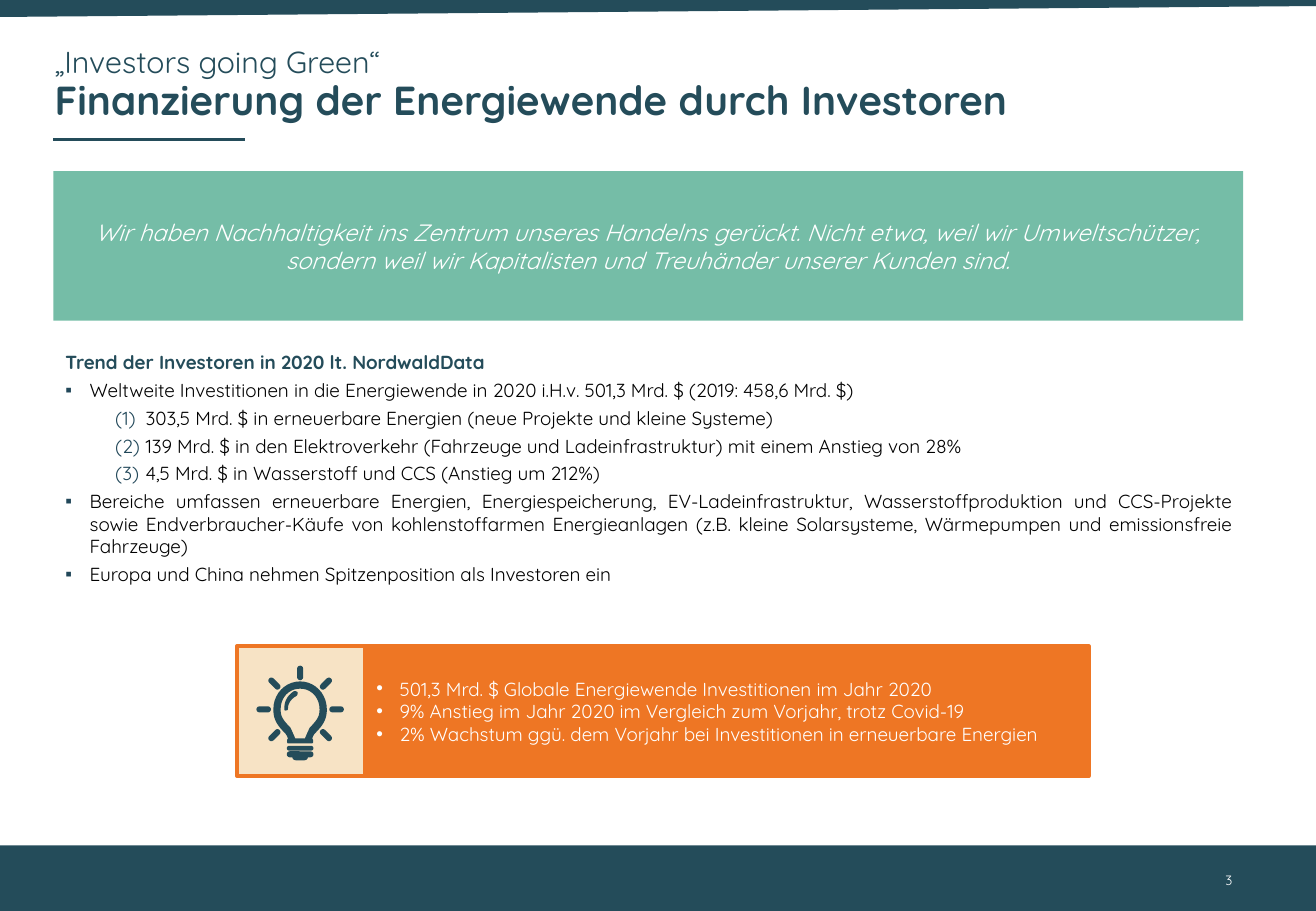
"""Build the slide on how investors finance the energy transition."""
from dataclasses import dataclass
from math import cos, radians, sin

from lxml.etree import SubElement
from pptx import Presentation
from pptx.dml.color import RGBColor
from pptx.enum.shapes import MSO_CONNECTOR, MSO_SHAPE
from pptx.enum.text import MSO_ANCHOR, PP_ALIGN
from pptx.oxml.ns import qn
from pptx.util import Inches, Pt


@dataclass(frozen=True)
class Theme:
    font: str = "Quicksand"
    petrol: str = "244C5A"
    marker: str = "214759"
    green: str = "75BDA7"
    orange: str = "EE7624"
    cream: str = "F7E3C5"
    white: str = "FFFFFF"
    black: str = "000000"
    kicker: float = 18
    title: float = 24
    quote: float = 14
    body: float = 11.2
    page: float = 8


theme = Theme()


def paint(shape, fill, line=None):
    shape.shadow.inherit = False
    shape.fill.solid()
    shape.fill.fore_color.rgb = RGBColor.from_string(fill)
    if line:
        shape.line.color.rgb = RGBColor.from_string(line)
        shape.line.width = Pt(2.25)
    else:
        shape.line.fill.background()


def write(frame, rows, size, color, align=PP_ALIGN.LEFT, anchor=MSO_ANCHOR.TOP, inset=None):
    frame.word_wrap = True
    frame.vertical_anchor = anchor
    if inset is not None:
        frame.margin_left = frame.margin_right = Inches(inset)
        frame.margin_top = frame.margin_bottom = Inches(inset)
    for index, (text, style) in enumerate(rows):
        para = frame.paragraphs[0] if index == 0 else frame.add_paragraph()
        para.alignment = align
        if "bullet" in style:
            properties = para._p.get_or_add_pPr()
            properties.set("marL", str(Inches(style["left"])))
            properties.set("indent", str(Inches(-style["hang"])))
            tint = SubElement(properties, qn("a:buClr"))
            SubElement(tint, qn("a:srgbClr")).set("val", style["tint"])
            if style["bullet"] == "(1)":
                SubElement(properties, qn("a:buAutoNum")).set("type", "arabicParenBoth")
            else:
                SubElement(properties, qn("a:buFont")).set("typeface", "Arial")
                SubElement(properties, qn("a:buChar")).set("char", style["bullet"])
        if index and "before" in style:
            para.space_before = Pt(style["before"])
        span = para.add_run()
        span.text = text
        span.font.name = theme.font
        span.font.size = Pt(style.get("size", size))
        span.font.bold = style.get("bold", False)
        span.font.italic = style.get("italic", False)
        span.font.color.rgb = RGBColor.from_string(style.get("color", color))


deck = Presentation()
deck.slide_width, deck.slide_height = Inches(10.83), Inches(7.5)
page = deck.slides.add_slide(deck.slide_layouts[6])
shapes = page.shapes

band = shapes.build_freeform(0, 0)
band.add_line_segments([(Inches(x), Inches(y)) for x, y in [(10.83, 0), (10.83, 0.05), (0, 0.14)]])
paint(band.convert_to_shape(), theme.petrol)

rule = shapes.add_connector(MSO_CONNECTOR.STRAIGHT, Inches(0.44), Inches(1.15), Inches(2.02), Inches(1.15))
rule.line.color.rgb = RGBColor.from_string(theme.petrol)
rule.line.width = Pt(1.5)
SubElement(rule._element.spPr, qn("a:effectLst"))

footer = shapes.add_shape(MSO_SHAPE.RECTANGLE, 0, Inches(6.96), deck.slide_width, Inches(0.54))
paint(footer, theme.petrol)

title = shapes.add_textbox(Inches(0.45), Inches(0.39), Inches(9.79), Inches(0.64))
write(title.text_frame, [
    ("„Investors going Green“", {"size": theme.kicker}),
    ("Finanzierung der Energiewende durch Investoren", {"bold": True}),
], theme.title, theme.petrol, inset=0)
for para in title.text_frame.paragraphs:
    para.line_spacing = 0.9

number = shapes.add_textbox(Inches(9.83), Inches(7.05), Inches(0.41), Inches(0.4))
write(number.text_frame, [("3", {})], theme.page, theme.white, PP_ALIGN.RIGHT, MSO_ANCHOR.MIDDLE)

quote = shapes.add_shape(MSO_SHAPE.RECTANGLE, Inches(0.44), Inches(1.41), Inches(9.79), Inches(1.23))
paint(quote, theme.green)
write(quote.text_frame, [(
    "Wir haben Nachhaltigkeit ins Zentrum unseres Handelns gerückt. Nicht etwa, weil wir Umweltschützer, "
    "sondern weil wir Kapitalisten und Treuhänder unserer Kunden sind.", {"italic": True},
)], theme.quote, theme.white, PP_ALIGN.CENTER, MSO_ANCHOR.MIDDLE, 0)

point = {"bullet": "▪", "left": 0.2, "hang": 0.2, "tint": theme.marker, "before": 3}
item = {**point, "bullet": "(1)", "left": 0.66, "hang": 0.25}
trend = shapes.add_textbox(Inches(0.44), Inches(2.84), Inches(9.8), Inches(2.3))
write(trend.text_frame, [
    ("Trend der Investoren in 2020 lt. NordwaldData", {"bold": True, "color": theme.petrol}),
    ("Weltweite Investitionen in die Energiewende in 2020 i.H.v. 501,3 Mrd. $ (2019: 458,6 Mrd. $)", point),
    ("303,5 Mrd. $ in erneuerbare Energien (neue Projekte und kleine Systeme)", item),
    ("139 Mrd. $ in den Elektroverkehr (Fahrzeuge und Ladeinfrastruktur) mit einem Anstieg von 28%", item),
    ("4,5 Mrd. $ in Wasserstoff und CCS (Anstieg um 212%)", item),
    ("Bereiche umfassen erneuerbare Energien, Energiespeicherung, EV-Ladeinfrastruktur, "
     "Wasserstoffproduktion und CCS-Projekte sowie Endverbraucher-Käufe von kohlenstoffarmen "
     "Energieanlagen (z.B. kleine Solarsysteme, Wärmepumpen und emissionsfreie Fahrzeuge)", point),
    ("Europa und China nehmen Spitzenposition als Investoren ein", point),
], theme.body, theme.black, PP_ALIGN.JUSTIFY)

icon_panel = shapes.add_shape(MSO_SHAPE.RECTANGLE, Inches(1.95), Inches(5.32), Inches(6.29), Inches(1.07))
paint(icon_panel, theme.cream, theme.orange)
facts = shapes.add_shape(MSO_SHAPE.RECTANGLE, Inches(3), Inches(5.32), Inches(5.96), Inches(1.07))
paint(facts, theme.orange, theme.orange)
fact = {"bullet": "•", "left": 0.19, "hang": 0.19, "tint": theme.white}
write(facts.text_frame, [
    ("501,3 Mrd. $ Globale Energiewende Investitionen im Jahr 2020", fact),
    ("9% Anstieg im Jahr 2020 im Vergleich zum Vorjahr, trotz Covid-19", fact),
    ("2% Wachstum ggü. dem Vorjahr bei Investitionen in erneuerbare Energien", fact),
], theme.body, theme.white, anchor=MSO_ANCHOR.MIDDLE)

bulb_x, bulb_y = 2.47, 5.84
steps = [step / 10 for step in range(1, 11)]
half_outer = [(0, -0.23), (0.12, -0.23), (0.22, -0.13), (0.22, 0), (0.22, 0.07), (0.2, 0.12), (0.13, 0.19),
              (0.12, 0.2), (0.11, 0.21), (0.1, 0.24), (0.11, 0.25), (0.11, 0.28), (0.1, 0.28)]
half_inner = [(0, -0.17), (0.09, -0.17), (0.16, -0.1), (0.16, 0), (0.16, 0.05), (0.15, 0.08), (0.08, 0.15),
              (0.08, 0.15), (0.06, 0.19), (0.04, 0.24)]
glint = [(-0.05, -0.15), (-0.1, -0.12), (-0.13, -0.07), (-0.13, -0.01), (-0.13, 0.01), (-0.13, 0.01),
         (-0.12, 0.01), (-0.11, 0.01), (-0.1, 0.01), (-0.1, -0.01), (-0.1, -0.05), (-0.07, -0.09),
         (-0.03, -0.11), (-0.02, -0.12), (-0.02, -0.13), (-0.02, -0.14), (-0.03, -0.15), (-0.04, -0.15),
         (-0.05, -0.15)]
for contours, mirrored in [([half_outer, half_inner], True), ([glint], False)]:
    builder = None
    for controls in contours:
        outline = [controls[0]]
        for start in range(0, len(controls) - 1, 3):
            a, b, c, d = controls[start:start + 4]
            outline += [tuple((1 - t) ** 3 * a[k] + 3 * t * (1 - t) ** 2 * b[k] + 3 * t * t * (1 - t) * c[k]
                              + t ** 3 * d[k] for k in (0, 1)) for t in steps]
        if mirrored:
            outline += [(-x, y) for x, y in reversed(outline)]
        places = [(Inches(bulb_x + x), Inches(bulb_y + y)) for x, y in outline]
        if builder is None:
            builder = shapes.build_freeform(*places[0])
        else:
            builder.move_to(*places[0])
        builder.add_line_segments(places[1:])
    paint(builder.convert_to_shape(), theme.petrol)

rays = [(bulb_x + 0.3 * cos(radians(angle)), bulb_y + 0.3 * sin(radians(angle)), 0.12, 0.05, angle)
        for angle in range(135, 406, 45)]
socket = [(bulb_x, 6.16, 0.22, 0.04, 0), (bulb_x, 6.21, 0.22, 0.05, 0), (bulb_x, 6.23, 0.13, 0.06, 0)]
for x, y, width, height, angle in rays + socket:
    pill = shapes.add_shape(MSO_SHAPE.ROUNDED_RECTANGLE, Inches(x - width / 2), Inches(y - height / 2),
                            Inches(width), Inches(height))
    pill.adjustments[0] = 0.5
    pill.rotation = angle % 360
    paint(pill, theme.petrol)

deck.save("out.pptx")
